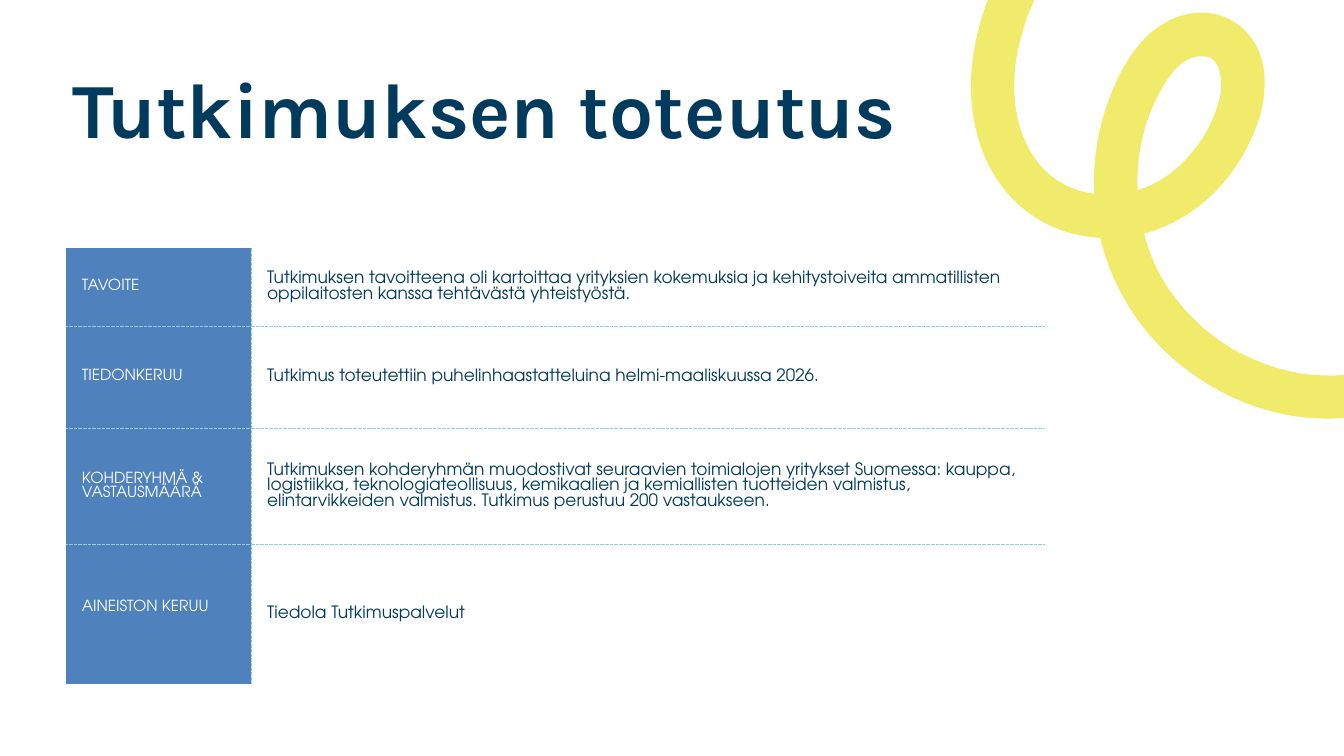
from lxml.etree import SubElement
from pptx import Presentation
from pptx.dml.color import RGBColor
from pptx.enum.text import MSO_ANCHOR, PP_ALIGN
from pptx.oxml.ns import qn
from pptx.util import Pt

NAVY = RGBColor(0x00, 0x3A, 0x5D)
BLUE = RGBColor(0x4F, 0x81, 0xBD)
AQUA = RGBColor(0x93, 0xCD, 0xDD)
YELLOW = RGBColor(0xF0, 0xEB, 0x6B)
WHITE = RGBColor(0xFF, 0xFF, 0xFF)
TITLE_FONT = "Karla"
TABLE_FONT = "TeX Gyre Adventor"

MARGIN = 77.8
COLUMN_WIDTHS = [218.2, 934.5]
ROWS = [
    (92.2, "TAVOITE",
     "Tutkimuksen tavoitteena oli kartoittaa yrityksien kokemuksia ja kehitystoiveita "
     "ammatillisten oppilaitosten kanssa tehtävästä yhteistyöstä."),
    (120.2, "TIEDONKERUU",
     "Tutkimus toteutettiin puhelinhaastatteluina helmi-maaliskuussa 2026."),
    (137.5, "KOHDERYHMÄ & VASTAUSMÄÄRÄ",
     "Tutkimuksen kohderyhmän muodostivat seuraavien toimialojen yritykset Suomessa: "
     "kauppa, logistiikka, teknologiateollisuus, kemikaalien ja kemiallisten tuotteiden "
     "valmistus, elintarvikkeiden valmistus. Tutkimus perustuu 200 vastaukseen."),
    (164.2, "AINEISTON KERUU", "Tiedola Tutkimuspalvelut"),
]

RIBBON_UNIT = 0.72
RIBBON_OUTLINE = [
    (28, 0), (104, 0), (93, 27),
    (84, 54, 76, 81, 73, 110), (69, 146, 72, 183, 83, 215),
    (95, 249, 114, 276, 139, 293), (157, 306, 179, 314, 202, 317),
    (202, 310, 202, 303, 202, 296), (202, 232, 219, 169, 248, 114),
    (268, 79, 288, 55, 314, 40), (330, 29, 349, 23, 368, 21),
    (390, 19, 411, 24, 428, 34), (456, 50, 475, 79, 480, 115),
    (483, 143, 480, 174, 469, 203), (442, 278, 389, 338, 323, 368),
    (310, 374, 297, 379, 284, 382), (289, 404, 298, 426, 308, 446),
    (332, 491, 368, 530, 411, 560), (455, 589, 505, 607, 555, 613),
    (572, 614, 589, 615, 606, 614), (611, 613), (611, 684), (588, 685),
    (575, 685, 561, 684, 548, 683), (486, 677, 425, 654, 372, 618),
    (318, 582, 275, 534, 246, 479), (231, 451, 220, 421, 212, 389),
    (171, 387, 131, 374, 99, 351), (61, 325, 33, 286, 16, 238),
    (2, 196, -3, 148, 3, 101), (7, 66, 16, 33, 28, 0),
]
RIBBON_LOOP = [
    (378, 92), (369, 92, 360, 94, 351, 100), (337, 109, 324, 124, 311, 148),
    (286, 193, 273, 244, 273, 297), (273, 302, 273, 306, 273, 311),
    (280, 309, 287, 307, 293, 304), (318, 292, 340, 276, 359, 253),
    (378, 232, 393, 206, 402, 179), (409, 161, 412, 141, 409, 125),
    (407, 110, 402, 100, 393, 95), (389, 93, 384, 92, 378, 92),
]


def bend_lines(shape, segments, origin_x, origin_y):
    """Turn the straight lines of a freeform into cubic curves where segments ask for it."""
    lines = list(shape.element.iter(qn("a:lnTo")))
    for line, segment in zip(lines, segments):
        if len(segment) == 2:
            continue
        line.tag = qn("a:cubicBezTo")
        line.remove(line[0])
        for x, y in zip(segment[::2], segment[1::2]):
            SubElement(line, qn("a:pt"), x=str(x - origin_x), y=str(y - origin_y))


def add_ribbon(slide, left, top):
    """Draw the yellow looping ribbon from its top left corner."""
    contours = [RIBBON_OUTLINE, RIBBON_LOOP]
    ends = [[segment[-2:] for segment in contour] for contour in contours]
    builder = slide.shapes.build_freeform(*ends[0][0], scale=Pt(RIBBON_UNIT))
    builder.add_line_segments(ends[0][1:], close=True)
    builder.move_to(*ends[1][0])
    builder.add_line_segments(ends[1][1:], close=True)
    ribbon = builder.convert_to_shape(Pt(left), Pt(top))
    origin_x, origin_y = map(min, zip(*ends[0]))
    bend_lines(ribbon, RIBBON_OUTLINE[1:] + RIBBON_LOOP[1:], origin_x, origin_y)
    ribbon.shadow.inherit = False
    ribbon.fill.solid()
    ribbon.fill.fore_color.rgb = YELLOW
    ribbon.line.fill.background()


def add_title(slide, left, top, width, height):
    """Place and format the title placeholder."""
    title = slide.shapes.title
    title.left, title.top, title.width, title.height = map(Pt, (left, top, width, height))
    frame = title.text_frame
    frame.text = "Tutkimuksen toteutus"
    frame.word_wrap = True
    frame.vertical_anchor = MSO_ANCHOR.TOP
    paragraph = frame.paragraphs[0]
    paragraph.alignment = PP_ALIGN.LEFT
    paragraph.font.name = TITLE_FONT
    paragraph.font.size = Pt(92)
    paragraph.font.bold = True
    paragraph.font.color.rgb = NAVY


def set_borders(cell, visible_sides):
    """Dot the named sides of a cell and clear the others."""
    properties = cell._tc.get_or_add_tcPr()
    for side in "LRTB":
        line = SubElement(properties, qn(f"a:ln{side}"), w=str(Pt(0.5)))
        if side in visible_sides:
            fill = SubElement(line, qn("a:solidFill"))
            SubElement(fill, qn("a:srgbClr"), val=str(AQUA))
            SubElement(line, qn("a:prstDash"), val="sysDot")
        else:
            SubElement(line, qn("a:noFill"))


def fill_cell(cell, text, size, spacing, color):
    """Write one cell with its margins and font."""
    cell.text = text
    cell.vertical_anchor = MSO_ANCHOR.MIDDLE
    cell.margin_left, cell.margin_right = Pt(18.7), Pt(9.4)
    cell.margin_top = cell.margin_bottom = Pt(7.2)
    paragraph = cell.text_frame.paragraphs[0]
    paragraph.line_spacing = Pt(spacing)
    paragraph.font.name = TABLE_FONT
    paragraph.font.size = Pt(size)
    paragraph.font.color.rgb = color


def add_facts_table(slide, left, top):
    """Build the table of study facts from its top left corner."""
    heights = [row[0] for row in ROWS]
    frame = slide.shapes.add_table(len(ROWS), 2, Pt(left), Pt(top),
                                   Pt(sum(COLUMN_WIDTHS)), Pt(sum(heights)))
    table = frame.table
    table.first_row = table.horz_banding = False
    for column, width in zip(table.columns, COLUMN_WIDTHS):
        column.width = Pt(width)
    for index, (height, label, description) in enumerate(ROWS):
        table.rows[index].height = Pt(height)
        sides = ("T" if index else "") + ("B" if index < len(ROWS) - 1 else "")
        label_cell, description_cell = table.cell(index, 0), table.cell(index, 1)
        set_borders(label_cell, sides + "R")
        set_borders(description_cell, sides + "L")
        fill_cell(label_cell, label, 18, 16.8, WHITE)
        fill_cell(description_cell, description, 20, 18.6, NAVY)
        label_cell.fill.solid()
        label_cell.fill.fore_color.rgb = BLUE
        description_cell.fill.background()
    table.cell(len(ROWS) - 1, 0).margin_bottom = Pt(24)


def main():
    """Create the slide and save it."""
    presentation = Presentation()
    presentation.slide_width, presentation.slide_height = Pt(1583.3), Pt(890.6)
    slide = presentation.slides.add_slide(presentation.slide_layouts[5])
    add_ribbon(slide, 1143.4, 0)
    add_title(slide, MARGIN, 67, 1034.6, 211.7)
    add_facts_table(slide, MARGIN, 291.6)
    presentation.save("out.pptx")


if __name__ == "__main__":
    main()
